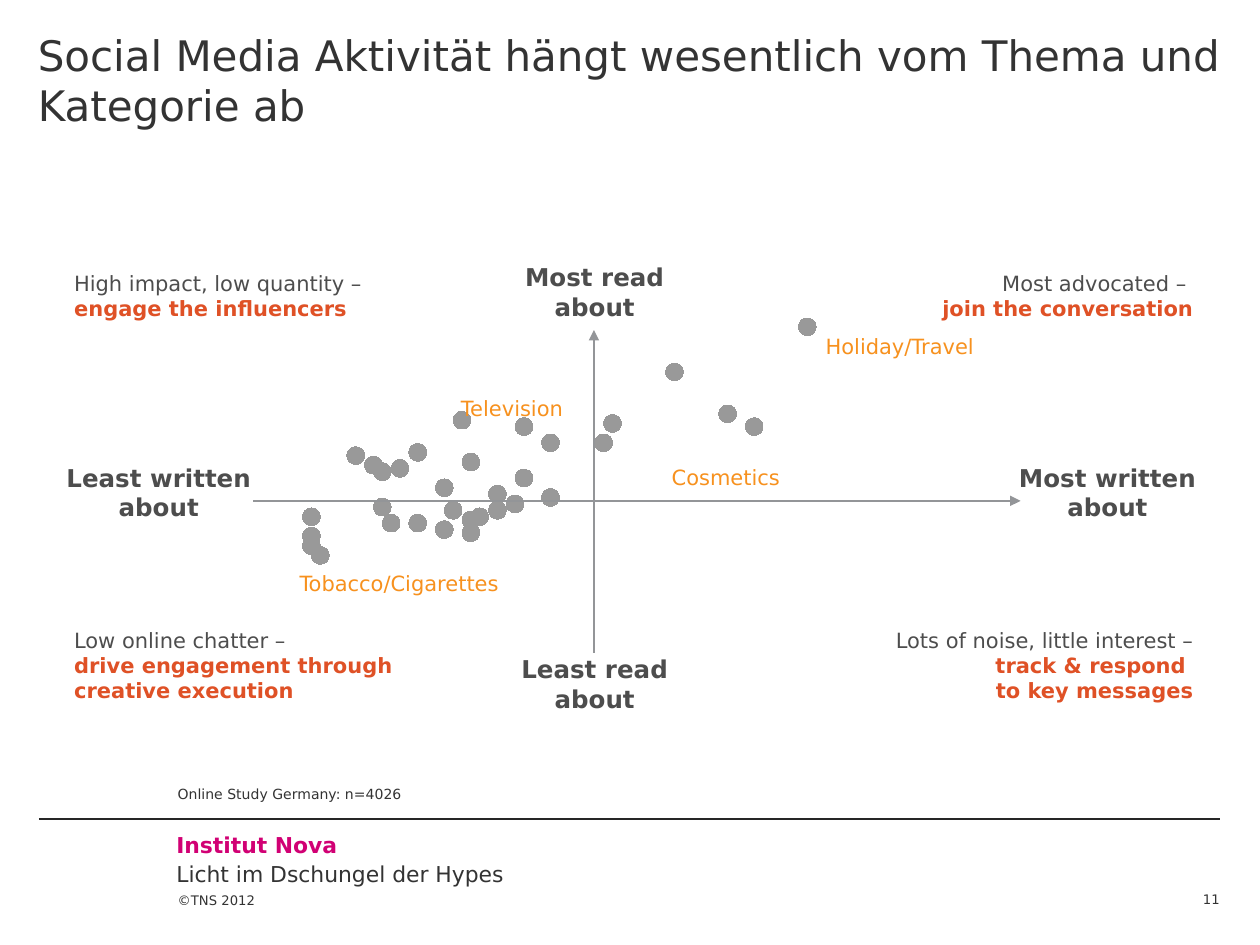
"""Build the slide that maps product categories by how much is read and written about them."""
from lxml import etree
from pptx import Presentation, util as u
from pptx.chart import data as chart_data
from pptx.dml.color import RGBColor
from pptx.enum import chart as charts, shapes, text
from pptx.oxml import parse_xml
from pptx.oxml.ns import nsdecls, qn

Pt = u.Pt
FONT = "DejaVu Sans"
DARK, GREY, RED, ORANGE, PINK = "333333", "4D4D4D", "DF5126", "F7911E", "D10074"
LEFT, CENTER, RIGHT = text.PP_ALIGN.LEFT, text.PP_ALIGN.CENTER, text.PP_ALIGN.RIGHT
TOP, MIDDLE, BOTTOM = text.MSO_ANCHOR.TOP, text.MSO_ANCHOR.MIDDLE, text.MSO_ANCHOR.BOTTOM


def color(value):
    return RGBColor.from_string(value)


def write(shape, box, lines, size, align=LEFT, anchor=TOP, margins=(0, 0, 0, 0)):
    """Place a shape and fill it with (text, colour, bold) paragraphs."""
    shape.left, shape.top, shape.width, shape.height = map(Pt, box)
    frame = shape.text_frame
    frame.word_wrap = True
    frame.auto_size = text.MSO_AUTO_SIZE.NONE
    frame.vertical_anchor = anchor
    frame.margin_left, frame.margin_top, frame.margin_right, frame.margin_bottom = map(Pt, margins)
    frame.text = "\n".join(line[0] for line in lines)
    for paragraph, (content, tone, bold) in zip(frame.paragraphs, lines):
        paragraph.text = content
        paragraph.alignment = align
        for run in paragraph.runs:
            run.font.name, run.font.size, run.font.bold = FONT, Pt(size), bold
            run.font.color.rgb = color(tone)


presentation = Presentation()
presentation.slide_width, presentation.slide_height = Pt(720), Pt(540)
slide = presentation.slides.add_slide(presentation.slide_layouts[5])

write(slide.shapes.title, (0, 0, 720, 81.4),
      [("Social Media Aktivität hängt wesentlich vom Thema und Kategorie ab", DARK, False)],
      24, margins=(21.6, 16.6, 21.6, 0))

written = [6.4, 6, 5.8, 5.3, 5.5, 5.2, 3.7, 4.5, 4.5, 5.8, 5.6, 4.9, 5.5, 4.6, 3.8, 7, 9.3,
           4.9, 4.7, 3.7, 3.7, 4.4, 4.2, 8.7, 8.4, 7.1, 6.4, 5.5, 7.8, 5.2, 6.1, 5.4, 4.4, 6.1]
read = [47, 45, 43, 43, 36, 37, 32, 55, 44, 48, 41, 39, 40, 39, 29, 64, 100,
        61, 56, 35, 41, 57, 60, 69, 73, 70, 64, 58, 86, 50, 69, 71, 57, 53]
points = chart_data.XyChartData()
categories = points.add_series("Series 1")
for x, y in zip(written, read):
    categories.add_data_point(x, y)

chart = slide.shapes.add_chart(charts.XL_CHART_TYPE.XY_SCATTER, Pt(136.8), Pt(146.9),
                               Pt(360), Pt(223.9), points).chart
chart.has_legend = chart.has_title = False
chart.font.name, chart.font.size = FONT, Pt(18)
chart.font.color.rgb = color("000000")
for axis, low, high in ((chart.category_axis, 3, 10), (chart.value_axis, 0, 120)):
    axis.minimum_scale, axis.maximum_scale = low, high
    axis.has_major_gridlines = False
    axis.visible = False
plot = chart.plots[0]
plot.vary_by_categories = False
series = plot.series[0]
series.format.line.fill.background()
series.marker.style, series.marker.size = charts.XL_MARKER_STYLE.CIRCLE, 10
series.marker.format.fill.solid()
series.marker.format.fill.fore_color.rgb = color("999999")
series.marker.format.line.color.rgb = color("999999")

plot_area = chart.element.find(".//" + qn("c:plotArea"))
for old_layout in plot_area.findall(qn("c:layout")):
    plot_area.remove(old_layout)
plot_area.insert(0, parse_xml(
    f'<c:layout {nsdecls("c")}><c:manualLayout><c:layoutTarget val="inner"/>'
    '<c:xMode val="edge"/><c:yMode val="edge"/><c:x val="0.016"/><c:y val="0.014"/>'
    '<c:w val="0.984"/><c:h val="0.986"/></c:manualLayout></c:layout>'))

for start_x, start_y, end_x, end_y, tone, width, arrow in [
        (22.3, 468, 697, 468, "262626", 0.75, False),
        (339.4, 373, 339.4, 188.6, "939598", 1.25, True),
        (144.7, 286.2, 583.2, 286.2, "939598", 1.5, True)]:
    line = slide.shapes.add_connector(shapes.MSO_CONNECTOR.STRAIGHT, Pt(start_x), Pt(start_y),
                                      Pt(end_x), Pt(end_y))
    line.line.color.rgb, line.line.width = color(tone), Pt(width)
    if arrow:
        etree.SubElement(line.line._get_or_add_ln(), qn("a:tailEnd"), type="triangle")
    etree.SubElement(line.element.spPr, qn("a:effectLst"))

entries = []
for content, left, top, width in [
        ("Most written about", 576.7, 265.7, 112.3), ("Least written about", 35.3, 265.7, 110.9),
        ("Most read about", 285.1, 151.2, 109.4), ("Least read about", 285.1, 375.1, 109.4)]:
    entries.append(((left, top, width, 31), [(content, GREY, True)], 14, CENTER, MIDDLE))

for note, advice, left, top, width, align in [
        ("High impact, low quantity –", "engage the influencers", 35.3, 151.2, 219, LEFT),
        ("Most advocated – ", "join the conversation", 496.8, 151.2, 192.2, RIGHT),
        ("Low online chatter –", "drive engagement through creative execution",
         35.3, 355, 203.8, LEFT),
        ("Lots of noise, little interest –", "track & respond \vto key messages",
         449.3, 355, 239.7, RIGHT)]:
    entries.append(((left, top, width, 51), [(note, GREY, False), (advice, RED, True)],
                    12, align, TOP, (7.2, 3.6, 7.2, 3.6)))

for content, left, top, width, align in [
        ("Holiday/Travel", 445, 190.8, 111.6, RIGHT), ("Cosmetics", 383.8, 265.7, 99.4, LEFT),
        ("Tobacco/Cigarettes", 151.9, 326.2, 133.2, RIGHT), ("Television", 210.2, 226.1, 111.6, RIGHT)]:
    entries.append(((left, top, width, 14.4), [(content, ORANGE, False)], 12, align))

footer_margins = (38.9, 7.2, 7.2, 3.6)
entries += [
    ((101.5, 438.5, 595.4, 28.8), [("Online Study Germany: n=4026", DARK, False)],
     8, LEFT, BOTTOM, (0, 0, 0, 8.6)),
    ((61.9, 468, 594.7, 29.5), [("Institut Nova", PINK, True)], 12.5, LEFT, TOP, footer_margins),
    ((61.9, 484.6, 594.7, 29.5), [("Licht im Dschungel der Hypes", DARK, False)],
     12.5, LEFT, TOP, footer_margins),
    ((101.5, 498.2, 59.8, 41.8), [("©TNS 2012", DARK, False)], 7.5, LEFT, BOTTOM, (0, 0, 0, 20.9)),
    ((657.4, 498.2, 39.6, 20.2), [("11", DARK, False)], 7.5, RIGHT, BOTTOM)]

for entry in entries:
    write(slide.shapes.add_textbox(0, 0, 0, 0), *entry)

presentation.save("out.pptx")
